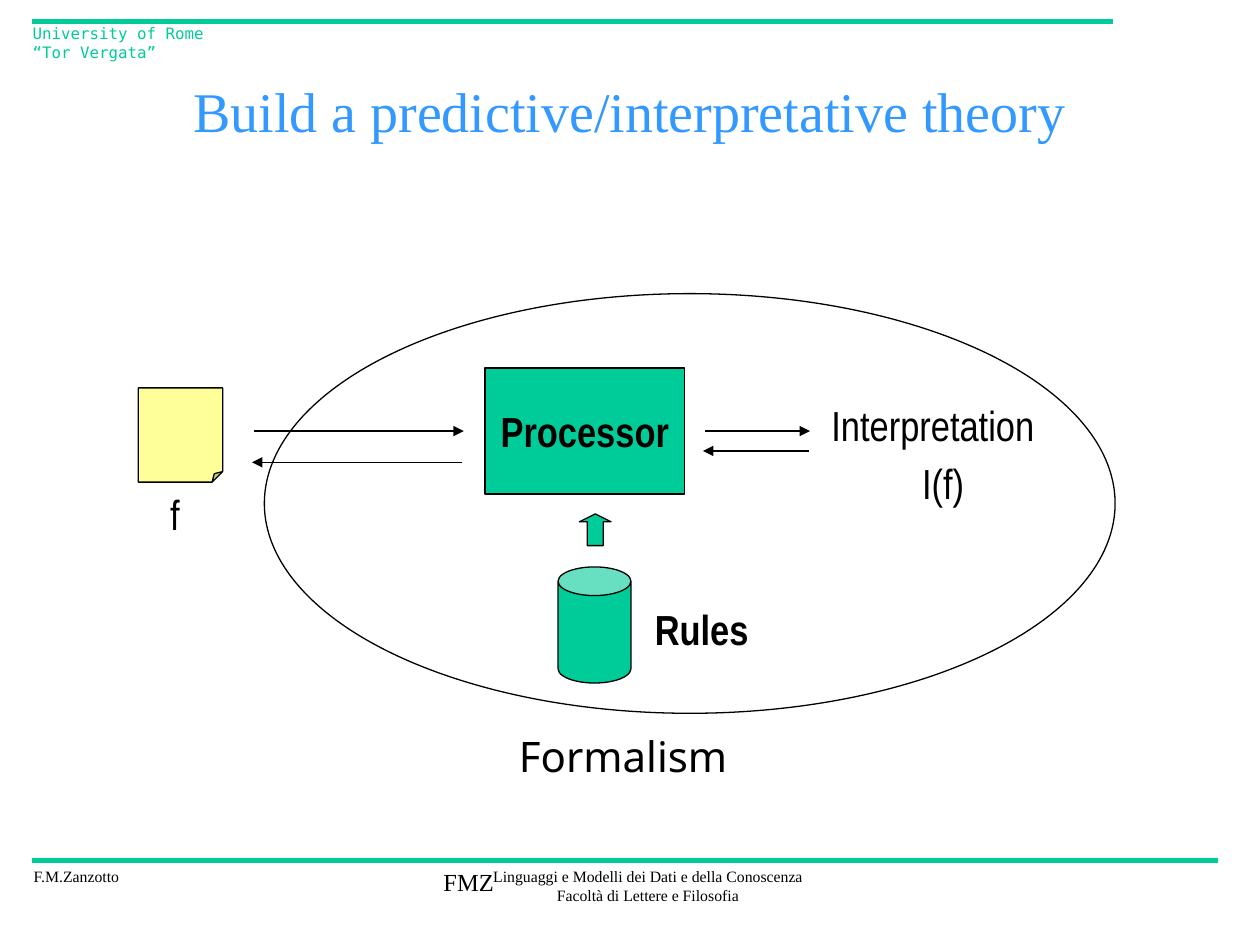
from lxml import etree
from pptx import Presentation
from pptx.dml.color import RGBColor
from pptx.enum.shapes import MSO_CONNECTOR, MSO_SHAPE
from pptx.enum.text import MSO_ANCHOR, PP_ALIGN
from pptx.oxml.ns import qn
from pptx.util import Cm, Pt

STRAIGHT = MSO_CONNECTOR.STRAIGHT
OVAL, BOX, CAN = MSO_SHAPE.OVAL, MSO_SHAPE.RECTANGLE, MSO_SHAPE.CAN
UP_ARROW, NOTE = MSO_SHAPE.UP_ARROW, MSO_SHAPE.FOLDED_CORNER
LEFT, CENTER = PP_ALIGN.LEFT, PP_ALIGN.CENTER
TOP, MIDDLE = MSO_ANCHOR.TOP, MSO_ANCHOR.MIDDLE

THEME = {
    "green": RGBColor(0x00, 0xCC, 0x99),
    "blue": RGBColor(0x33, 0x99, 0xFF),
    "yellow": RGBColor(0xFF, 0xFF, 0x99),
    "black": RGBColor(0x00, 0x00, 0x00),
    "serif": "Times New Roman",
    "narrow": "Arial Narrow",
    "sans": "Noto Sans",
    "mono": "DejaVu Sans Mono",
    "title": 32,
    "label": 24,
    "mark": 14,
    "small": 9,
    "rule": 3,
    "outline": 0.75,
}

# All lengths are in centimetres; boxes are left, top, width, height.
FOOTER_TOP = 17.35
RULES = [(0.64, 24.56, FOOTER_TOP), (0.64, 22.43, 0.43)]

SMALL = {"size": "small", "font": "serif"}
PAGE_TEXTS = [
    (["F.M.Zanzotto"], (0.43, FOOTER_TOP, 2.26, 0.64), SMALL),
    (["Linguaggi e Modelli dei Dati e della Conoscenza",
      "Facoltà di Lettere e Filosofia"],
     (9.68, FOOTER_TOP, 6.76, 1.02), {**SMALL, "align": CENTER}),
    (["University of Rome", "“Tor Vergata”"], (0.41, 0.36, 4.34, 1.02),
     {"size": "small", "font": "mono", "color": "green", "wrap": True}),
    (["FMZ"], (8.69, FOOTER_TOP, 8.05, 1.27),
     {"size": "mark", "font": "serif", "wrap": True}),
    (["Build a predictive/interpretative theory"], (1.9, 1.27, 21.6, 1.9),
     {"size": "title", "font": "serif", "color": "blue",
      "align": CENTER, "anchor": MIDDLE, "wrap": True}),
]

# kind, box, fill, adjustment guides in thousandths of a percent
DIAGRAM_SHAPES = [
    (OVAL, (5.33, 5.92, 17.15, 8.46), None, {}),
    (CAN, (11.25, 11.43, 1.47, 2.34), "green", {"adj": 39300}),
    (UP_ARROW, (11.68, 10.36, 0.64, 0.64), "green",
     {"adj1": 50000, "adj2": 25000}),
    (NOTE, (2.79, 7.82, 1.7, 1.9), "yellow", {"adj": 12500}),
]
PROCESSOR = (9.78, 7.42, 4.02, 2.54)

DIAGRAM_LABELS = [
    ("Formalism", (10.21, 14.6, 4.8, 1.27), {"font": "sans"}),
    ("Rules", (12.95, 12.04, 2.41, 1.27), {"bold": True}),
    ("Interpretation", (16.51, 7.92, 4.62, 1.27), {}),
    ("f", (3.18, 9.73, 0.71, 1.27), {}),
    ("I(f)", (18.34, 9.09, 1.75, 1.27), {}),
]

# start x, end x, y; the arrowhead sits at the end
ARROWS = [
    (5.13, 9.35, 8.69),
    (14.22, 16.33, 8.69),
    (16.31, 14.17, 9.09),
    (9.32, 5.08, 9.32),
]


def write_text(shape, lines, size="label", font="narrow", color="black",
               bold=False, align=LEFT, anchor=TOP, wrap=False):
    frame = shape.text_frame
    frame.word_wrap = wrap
    frame.vertical_anchor = anchor
    frame.text = "\n".join(lines)
    for paragraph in frame.paragraphs:
        paragraph.alignment = align
        paragraph.font.size = Pt(THEME[size])
        paragraph.font.name = THEME[font]
        paragraph.font.bold = bold
        paragraph.font.color.rgb = THEME[color]


def add_text(slide, lines, box, **text_format):
    write_text(slide.shapes.add_textbox(*map(Cm, box)), lines, **text_format)


def set_guides(shape, guides):
    """Write adjustments by guide name, as python-pptx has none for up arrows."""
    geometry = shape._element.spPr.find(qn("a:prstGeom"))
    guide_list = geometry.find(qn("a:avLst"))
    if guide_list is None:
        guide_list = etree.SubElement(geometry, qn("a:avLst"))
    for guide in list(guide_list):
        guide_list.remove(guide)
    for name, value in guides.items():
        etree.SubElement(guide_list, qn("a:gd"), name=name, fmla=f"val {value}")


def add_outlined_shape(slide, kind, box, fill, guides):
    shape = slide.shapes.add_shape(kind, *map(Cm, box))
    shape.shadow.inherit = False
    if fill:
        shape.fill.solid()
        shape.fill.fore_color.rgb = THEME[fill]
    else:
        shape.fill.background()
    shape.line.color.rgb = THEME["black"]
    shape.line.width = Pt(THEME["outline"])
    set_guides(shape, guides)
    return shape


def add_horizontal_line(slide, start, end, y, color, width, arrow=False):
    connector = slide.shapes.add_connector(
        STRAIGHT, *map(Cm, (start, y, end, y)))
    connector.line.color.rgb = THEME[color]
    connector.line.width = Pt(THEME[width])
    properties = connector._element.spPr
    if arrow:
        etree.SubElement(properties.find(qn("a:ln")), qn("a:tailEnd"),
                         type="triangle")
    etree.SubElement(properties, qn("a:effectLst"))


def main():
    presentation = Presentation()
    presentation.slide_width, presentation.slide_height = Cm(25.4), Cm(19.05)
    slide = presentation.slides.add_slide(presentation.slide_layouts[6])

    for rule in RULES:
        add_horizontal_line(slide, *rule, "green", "rule")
    for lines, box, text_format in PAGE_TEXTS:
        add_text(slide, lines, box, **text_format)
    for shape_data in DIAGRAM_SHAPES:
        add_outlined_shape(slide, *shape_data)
    processor = add_outlined_shape(slide, BOX, PROCESSOR, "green", {})
    write_text(processor, ["Processor"], bold=True, align=CENTER, anchor=MIDDLE)
    for label, box, text_format in DIAGRAM_LABELS:
        add_text(slide, [label], box, **text_format)
    for arrow in ARROWS:
        add_horizontal_line(slide, *arrow, "black", "outline", arrow=True)

    presentation.save("out.pptx")


if __name__ == "__main__":
    main()
